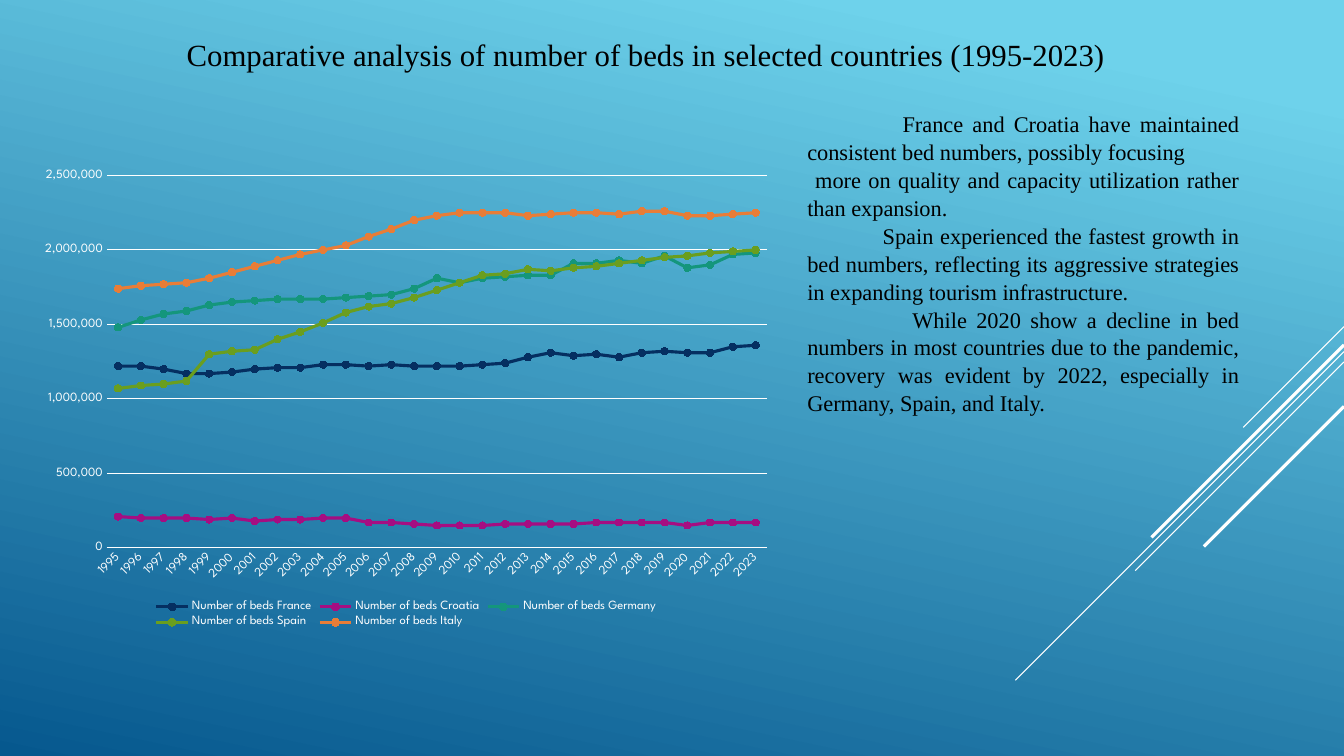
from lxml import etree
from pptx import Presentation
from pptx import util as u
from pptx.chart.data import CategoryChartData
from pptx.dml.color import RGBColor
from pptx.enum import chart as charts, shapes, text
from pptx.oxml.ns import qn

SLIDE_WIDTH = 33.87
TEXT_FONT = "Times New Roman"
CHART_FONT = "League Spartan"
WHITE = "FFFFFF"
BLACK = "000000"

TITLE = "Comparative analysis of number of beds in selected countries (1995-2023)"

FINDINGS = [
    ("France and Croatia have maintained consistent bed numbers, possibly focusing", 2.4),
    ("more on quality and capacity utilization rather than expansion.", 0.2),
    ("Spain experienced the fastest growth in bed numbers, reflecting its aggressive "
     "strategies in expanding tourism infrastructure.", 1.9),
    ("While 2020 show a decline in bed numbers in most countries due to the pandemic, "
     "recovery was evident by 2022, especially in Germany, Spain, and Italy.", 2.65),
]

DIAGONALS = [
    (8.23, 2.54, 0.75),
    (8.86, 8.28, 0.75),
    (9.12, 5.26, 0.75),
    (8.69, 4.85, 2.25),
    (10.24, 3.53, 2.25),
]

BEDS_UNIT = 10000
BEDS = {
    "France": ("052F61", [
        122, 122, 120, 117, 117, 118, 120, 121, 121, 123, 123, 122, 123, 122, 122,
        122, 123, 124, 128, 131, 129, 130, 128, 131, 132, 131, 131, 135, 136]),
    "Croatia": ("A50E82", [
        21, 20, 20, 20, 19, 20, 18, 19, 19, 20, 20, 17, 17, 16, 15,
        15, 15, 16, 16, 16, 16, 17, 17, 17, 17, 15, 17, 17, 17]),
    "Germany": ("14967C", [
        148, 153, 157, 159, 163, 165, 166, 167, 167, 167, 168, 169, 170, 174, 181,
        178, 181, 182, 183, 183, 191, 191, 193, 191, 196, 188, 190, 197, 198]),
    "Spain": ("6A9E1F", [
        107, 109, 110, 112, 130, 132, 133, 140, 145, 151, 158, 162, 164, 168, 173,
        178, 183, 184, 187, 186, 188, 189, 191, 193, 195, 196, 198, 199, 200]),
    "Italy": ("E87D37", [
        174, 176, 177, 178, 181, 185, 189, 193, 197, 200, 203, 209, 214, 220, 223,
        225, 225, 225, 223, 224, 225, 225, 224, 226, 226, 223, 223, 224, 225]),
}


def colour(value):
    """Turn a hex string into a colour."""
    return RGBColor.from_string(value)


def style_font(font, name, size, value):
    """Set the family, size and colour of a font."""
    font.name = name
    font.size = u.Pt(size)
    font.color.rgb = colour(value)


def style_line(line, value, width):
    """Set the colour and width of a line."""
    line.color.rgb = colour(value)
    line.width = u.Pt(width)


def paint_background(slide):
    """Fill the slide with the blue gradient."""
    fill = slide.background.fill
    fill.gradient()
    fill.gradient_angle = 360 - 102
    for stop, (position, value) in zip(fill.gradient_stops, [(0.1, "6ED2EB"), (1, "06588E")]):
        stop.position = position
        stop.color.rgb = colour(value)


def add_diagonal(slide, top, run, width):
    """Draw a 45 degree line down and left from the right edge."""
    connector = slide.shapes.add_connector(
        shapes.MSO_CONNECTOR.STRAIGHT,
        u.Cm(SLIDE_WIDTH), u.Cm(top), u.Cm(SLIDE_WIDTH - run), u.Cm(top + run))
    style_line(connector.line, WHITE, width)
    etree.SubElement(connector._element.spPr, qn("a:effectLst"))


def fill_placeholder(placeholder, box, paragraphs, size, line_spacing, space_after):
    """Move a placeholder and fill it with justified, indented paragraphs."""
    placeholder.left, placeholder.top, placeholder.width, placeholder.height = map(u.Cm, box)
    frame = placeholder.text_frame
    frame.word_wrap = True
    frame.auto_size = text.MSO_AUTO_SIZE.SHAPE_TO_FIT_TEXT
    frame.vertical_anchor = text.MSO_ANCHOR.TOP
    frame.text = "\n".join(words for words, _ in paragraphs)
    for paragraph, (_, indent) in zip(frame.paragraphs, paragraphs):
        paragraph.alignment = text.PP_ALIGN.JUSTIFY
        paragraph.line_spacing = line_spacing
        paragraph.space_before = u.Pt(0)
        paragraph.space_after = u.Pt(space_after)
        properties = paragraph._p.get_or_add_pPr()
        properties.set("marL", "0")
        properties.set("indent", str(u.Cm(indent)))
        etree.SubElement(properties, qn("a:buNone"))
        for run in paragraph.runs:
            style_font(run.font, TEXT_FONT, size, BLACK)


def style_axes(chart):
    """Format the year axis and the bed count axis."""
    years, counts = chart.category_axis, chart.value_axis
    for axis in (years, counts):
        axis.major_tick_mark = charts.XL_TICK_MARK.NONE
        axis.minor_tick_mark = charts.XL_TICK_MARK.NONE
        style_font(axis.tick_labels.font, CHART_FONT, 9, WHITE)
    style_line(years.format.line, WHITE, 0.75)
    years._element.find(qn("c:txPr")).find(qn("a:bodyPr")).set("rot", "-2700000")
    counts.format.line.fill.background()
    counts.has_major_gridlines = True
    style_line(counts.major_gridlines.format.line, WHITE, 0.75)
    counts.minimum_scale, counts.maximum_scale = 0, 2500000
    counts.major_unit = 500000
    counts.tick_labels.number_format = "#,##0"
    counts.tick_labels.number_format_is_linked = False


def style_series(series, value):
    """Give a series its line and round markers."""
    series.smooth = False
    style_line(series.format.line, value, 2.25)
    series.marker.style = charts.XL_MARKER_STYLE.CIRCLE
    series.marker.size = 5
    series.marker.format.fill.solid()
    series.marker.format.fill.fore_color.rgb = colour(value)
    style_line(series.marker.format.line, value, 0.75)


def add_beds_chart(slide):
    """Add the line chart of beds by country and year."""
    data = CategoryChartData(number_format="#,##0")
    data.categories = [str(year) for year in range(1995, 2024)]
    for country, (_, beds) in BEDS.items():
        data.add_series(f"Number of beds {country}", [count * BEDS_UNIT for count in beds])
    chart = slide.shapes.add_chart(
        charts.XL_CHART_TYPE.LINE_MARKERS,
        u.Cm(0.76), u.Cm(4.04), u.Cm(18.95), u.Cm(11.89), data).chart
    chart.has_title = False
    style_font(chart.font, CHART_FONT, 10, WHITE)
    chart.has_legend = True
    chart.legend.position = charts.XL_LEGEND_POSITION.BOTTOM
    chart.legend.include_in_layout = False
    style_font(chart.legend.font, CHART_FONT, 9, WHITE)
    chart.plots[0].vary_by_categories = False
    style_axes(chart)
    for series, (value, _) in zip(chart.plots[0].series, BEDS.values()):
        style_series(series, value)


def main():
    """Build the slide and save it."""
    presentation = Presentation()
    presentation.slide_width = u.Cm(SLIDE_WIDTH)
    presentation.slide_height = u.Cm(19.05)
    slide = presentation.slides.add_slide(presentation.slide_layouts[1])
    paint_background(slide)
    for diagonal in DIAGONALS:
        add_diagonal(slide, *diagonal)
    title, findings = slide.placeholders
    fill_placeholder(title, (4.45, 0.3, 24.59, 1.5), [(TITLE, 0)], 22, 1.5, 8)
    add_beds_chart(slide)
    fill_placeholder(findings, (20.09, 2.62, 11.4, 7.77), FINDINGS, 16, 1.04, 0)
    presentation.save("out.pptx")


if __name__ == "__main__":
    main()
